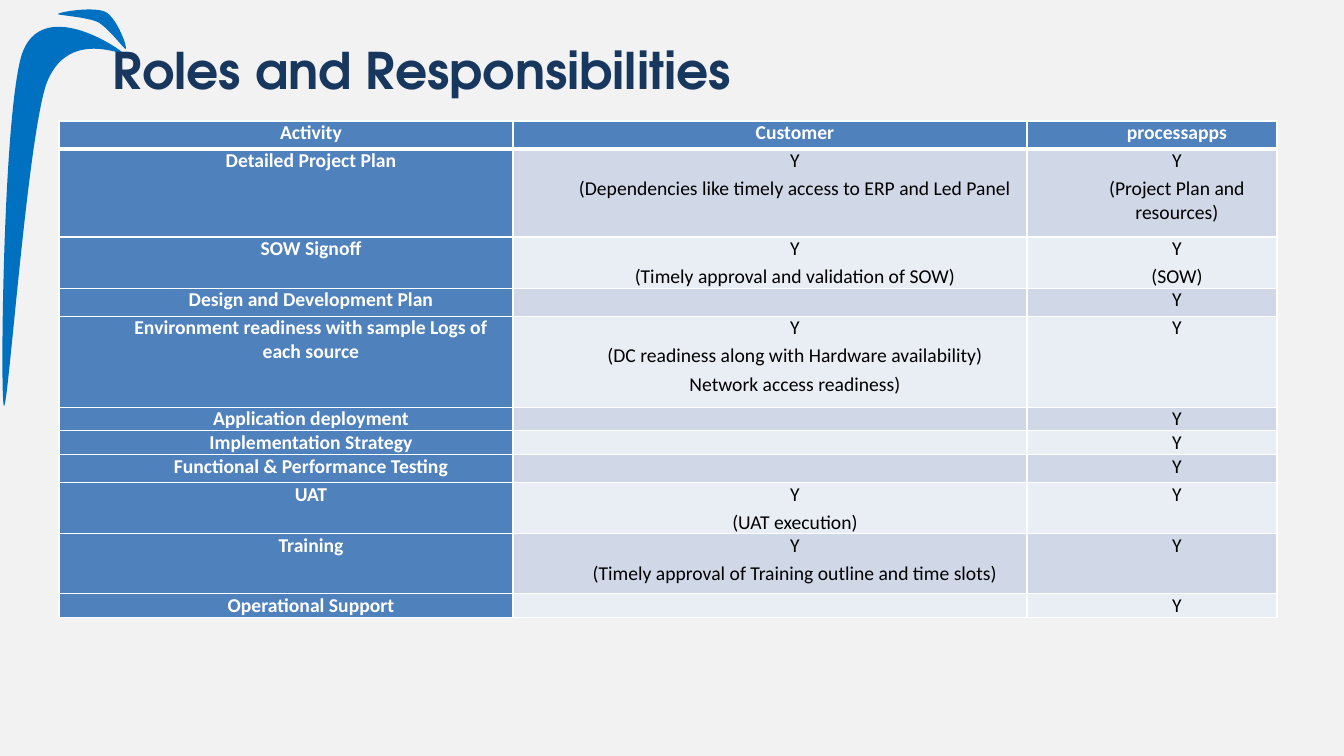
from math import cos, radians, sin

from lxml.etree import SubElement
from pptx import Presentation
from pptx.dml.color import RGBColor
from pptx.enum.text import MSO_ANCHOR as ANCHOR, PP_ALIGN as ALIGN
from pptx.oxml.ns import qn
from pptx.util import Emu, Pt

EMU_PER_PX = 914400 / 100.8

COLORS = {
    "background": "F2F2F2",
    "swoosh": "0070C0",
    "title": "17375E",
    "head": "4F81BD",
    "band_odd": "D0D8E8",
    "band_even": "E9EDF4",
    "white": "FFFFFF",
    "black": "000000",
}


def px(n):
    return Emu(round(n * EMU_PER_PX))


def color(name):
    return RGBColor.from_string(COLORS[name])


def write(p, text, size=14, font="Calibri", fill="black", bold=False,
          align=ALIGN.LEFT, indent=0, before=0):
    p.alignment = align
    p.space_before = Pt(before)
    if indent:
        pPr = p._p.get_or_add_pPr()
        pPr.set("marL", str(px(indent)))
        pPr.set("indent", "0")
    if not text:
        # An empty line keeps the text size, so the row stays low
        SubElement(p._p, qn("a:endParaRPr"), sz=str(size * 100))
        return
    r = p.add_run()
    r.text = text
    r.font.size, r.font.name, r.font.bold = Pt(size), font, bold
    r.font.color.rgb = color(fill)


def turn(point, center, degrees):
    a = radians(degrees)
    dx, dy = point[0] - center[0], point[1] - center[1]
    return (center[0] + dx * cos(a) - dy * sin(a),
            center[1] + dx * sin(a) + dy * cos(a))


class SlideBuilder:
    def __init__(self, prs):
        self.slide = prs.slides.add_slide(prs.slide_layouts[6])
        fill = self.slide.background.fill
        fill.solid()
        fill.fore_color.rgb = color("background")

    def curve(self, points, fill, center=(0, 0), rotation=0):
        """Start point, then two controls and an end for each curve."""
        start, *rest = [tuple(map(px, turn(pt, center, -rotation)))
                        for pt in points]
        fb = self.slide.shapes.build_freeform(*start)
        fb.add_line_segments(rest, close=True)
        sp = fb.convert_to_shape()
        # Each three line points become one cubic curve
        lines = list(sp._element.iter(qn("a:lnTo")))
        for i in range(0, len(rest), 3):
            first = lines[i]
            first.tag = qn("a:cubicBezTo")
            for line in lines[i + 1:i + 3]:
                first.append(line[0])
                line.getparent().remove(line)
        sp.rotation = rotation
        sp.shadow.inherit = False
        sp.fill.solid()
        sp.fill.fore_color.rgb = color(fill)
        sp.line.fill.background()

    def text(self, x, y, w, h, text, **style):
        sp = self.slide.shapes.add_textbox(px(x), px(y), px(w), px(h))
        tf = sp.text_frame
        tf.word_wrap = True
        tf.vertical_anchor = ANCHOR.BOTTOM
        tf.margin_left = tf.margin_right = px(12)
        tf.margin_top = tf.margin_bottom = px(6)
        write(tf.paragraphs[0], text, **style)

    def border(self, cell, side, width):
        ln = SubElement(cell._tc.get_or_add_tcPr(), qn("a:ln" + side),
                        w=str(Pt(width)))
        solid = SubElement(ln, qn("a:solidFill"))
        SubElement(solid, qn("a:srgbClr"), val=COLORS["white"])

    def cell(self, cell, row, col, lines):
        is_head = row == 0 or col == 0
        for side in "LRTB":
            thick = (row, side) in ((0, "B"), (1, "T"))
            self.border(cell, side, 3 if thick else 1)
        cell.fill.solid()
        band = "band_odd" if row % 2 else "band_even"
        cell.fill.fore_color.rgb = color("head" if is_head else band)
        cell.margin_left = cell.margin_right = px(6)
        cell.margin_top = cell.margin_bottom = 0
        tf = cell.text_frame
        for i, line in enumerate(lines):
            p = tf.add_paragraph() if i else tf.paragraphs[0]
            write(p, line, fill="white" if is_head else "black", bold=is_head,
                  align=ALIGN.CENTER, indent=50, before=3 if i else 0)

    def table(self, x, y, widths, heights, rows):
        frame = self.slide.shapes.add_table(
            len(rows), len(widths), px(x), px(y),
            px(sum(widths)), px(sum(heights)))
        table = frame.table
        for column, width in zip(table.columns, widths):
            column.width = px(width)
        for r, (height, row) in enumerate(zip(heights, rows)):
            table.rows[r].height = px(height)
            for c, text in enumerate(row):
                self.cell(table.cell(r, c), r, c, text.split("\n"))


ROLES = [
    ("Activity", "Customer", "processapps"),
    ("Detailed Project Plan",
     "Y\n(Dependencies like timely access to ERP and Led Panel",
     "Y\n(Project Plan and resources)"),
    ("SOW Signoff", "Y\n(Timely approval and validation of SOW)", "Y\n(SOW)"),
    ("Design and Development Plan", "", "Y"),
    ("Environment readiness with sample Logs of each source",
     "Y\n(DC readiness along with Hardware availability)\n"
     "Network access readiness)", "Y"),
    ("Application deployment", "", "Y"),
    ("Implementation Strategy", "", "Y"),
    ("Functional & Performance Testing", "", "Y"),
    ("UAT", "Y\n(UAT execution)", "Y"),
    ("Training", "Y\n(Timely approval of Training outline and time slots)", "Y"),
    ("Operational Support", "", "Y"),
]
# Least heights: rows grow to fit their text
ROW_HEIGHTS = [28, 88, 45, 28, 91, 14, 14, 28, 31, 60, 14]


def main():
    prs = Presentation()
    prs.slide_width, prs.slide_height = px(1344), px(756)
    s = SlideBuilder(prs)

    # Corner swoosh
    s.curve([
        (123, 53),
        (119, 48), (42, -4), (22, 54),
        (3, 114), (0, 401), (4, 406),
        (8, 411), (27, 144), (46, 85),
        (67, 26), (127, 58), (123, 53),
    ], "swoosh")
    s.curve([
        (58, 14),
        (57, 15), (87, 17), (98, 22),
        (109, 28), (125, 50), (126, 49),
        (128, 47), (117, 18), (106, 12),
        (94, 6), (59, 12), (58, 14),
    ], "swoosh", center=(95, 24), rotation=17.6)

    # Title
    s.text(101, 25, 1101, 81, "Roles and Responsibilities", size=36,
           font="TeX Gyre Adventor", fill="title", bold=True)

    # Responsibility table
    s.table(59, 121, [454, 514, 250], ROW_HEIGHTS, ROLES)

    prs.save("out.pptx")


if __name__ == "__main__":
    main()
